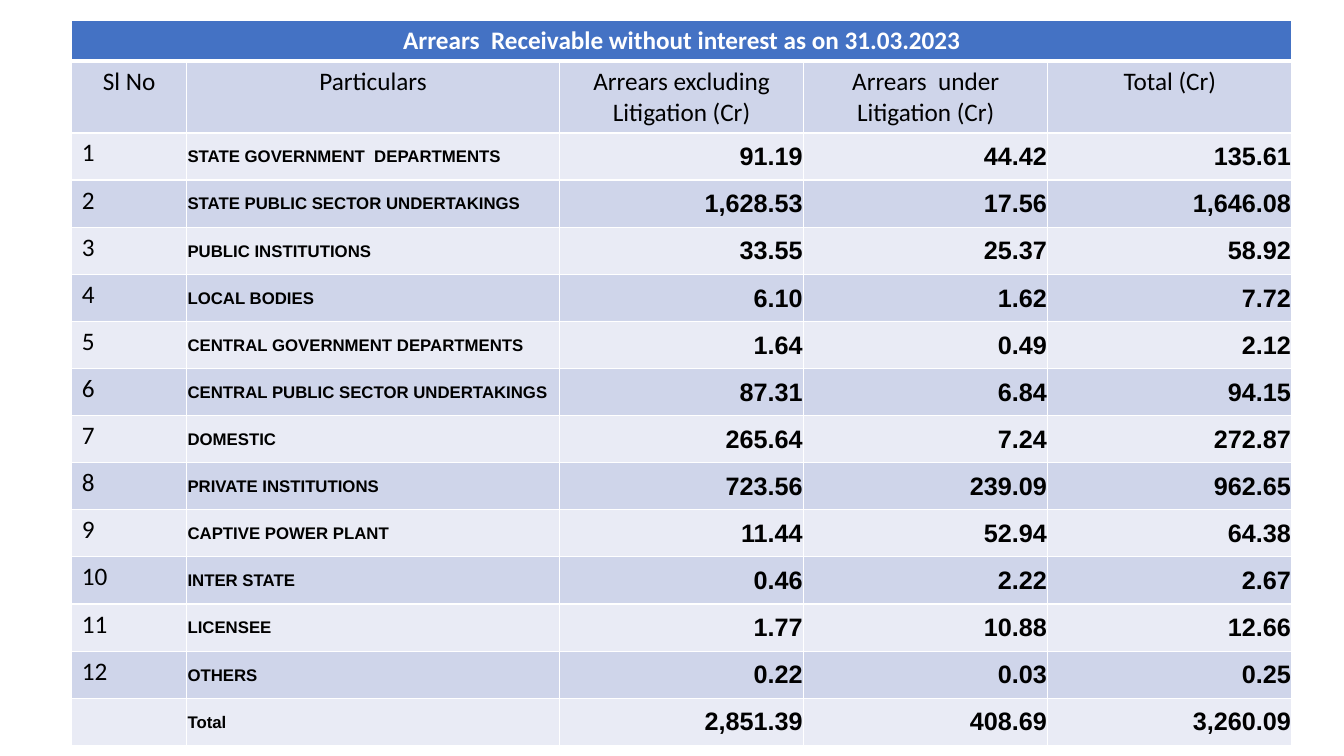
from lxml import etree
from pptx import Presentation
from pptx.dml.color import RGBColor
from pptx.enum import text
from pptx.oxml import ns
from pptx.util import Pt

COLORS = {
    "header": "4472C4",
    "band_dark": "CFD5EA",
    "band_light": "E9EBF5",
    "white": "FFFFFF",
    "black": "000000",
}
LEFT, CENTER, RIGHT = text.PP_ALIGN.LEFT, text.PP_ALIGN.CENTER, text.PP_ALIGN.RIGHT

TITLE = "Arrears  Receivable without interest as on 31.03.2023"
HEADINGS = ["Sl No", "Particulars", "Arrears excluding Litigation (Cr)",
            "Arrears  under Litigation (Cr)", "Total (Cr)"]
ARREARS = [
    ("STATE GOVERNMENT  DEPARTMENTS", "91.19", "44.42", "135.61"),
    ("STATE PUBLIC SECTOR UNDERTAKINGS", "1,628.53", "17.56", "1,646.08"),
    ("PUBLIC INSTITUTIONS", "33.55", "25.37", "58.92"),
    ("LOCAL BODIES", "6.10", "1.62", "7.72"),
    ("CENTRAL GOVERNMENT DEPARTMENTS", "1.64", "0.49", "2.12"),
    ("CENTRAL PUBLIC SECTOR UNDERTAKINGS", "87.31", "6.84", "94.15"),
    ("DOMESTIC", "265.64", "7.24", "272.87"),
    ("PRIVATE INSTITUTIONS", "723.56", "239.09", "962.65"),
    ("CAPTIVE POWER PLANT", "11.44", "52.94", "64.38"),
    ("INTER STATE", "0.46", "2.22", "2.67"),
    ("LICENSEE", "1.77", "10.88", "12.66"),
    ("OTHERS", "0.22", "0.03", "0.25"),
]
TOTALS = ("Total", "2,851.39", "408.69", "3,260.09")

COLUMN_WIDTHS = [82, 266.4, 174.4, 174.4, 174.4]
ROW_HEIGHTS = [29.2, 50.4] + [33.66] * (len(ARREARS) + 1)


class SlideBuilder:
    """Holds the style and the current slide."""

    def __init__(self, slide):
        self.slide = slide
        self.body_font = "Calibri"
        self.data_font = "Arial"

    def table(self, left, top, widths, heights):
        table = self.slide.shapes.add_table(
            len(heights), len(widths), Pt(left), Pt(top),
            Pt(sum(widths)), Pt(sum(heights))).table
        table.first_row = table.horz_banding = False
        for column, width in zip(table.columns, widths):
            column.width = Pt(width)
        for row, height in zip(table.rows, heights):
            row.height = Pt(height)
        return table

    def cell(self, cell, content, fill, color="black", align=LEFT, bold=False,
             bottom=1, top=1):
        cell.fill.solid()
        cell.fill.fore_color.rgb = RGBColor.from_string(COLORS[fill])
        self.borders(cell, {"L": 1, "R": 1, "T": top, "B": bottom})
        cell.text = content
        paragraph = cell.text_frame.paragraphs[0]
        paragraph.alignment = align
        font = paragraph.font
        font.name, font.size, font.bold = self.body_font, Pt(18), bold
        font.color.rgb = RGBColor.from_string(COLORS[color])

    def data_cell(self, cell, content, fill, align, size):
        self.cell(cell, content, fill, align=align, bold=True)
        cell.vertical_anchor = text.MSO_ANCHOR.MIDDLE
        cell.margin_left = cell.margin_right = cell.margin_top = Pt(0.7)
        cell.margin_bottom = Pt(0)
        font = cell.text_frame.paragraphs[0].font
        font.name, font.size = self.data_font, Pt(size)

    def borders(self, cell, widths):
        properties = cell._tc.get_or_add_tcPr()
        for index, (side, width) in enumerate(widths.items()):
            line = etree.Element(ns.qn(f"a:ln{side}"), w=str(Pt(width)))
            fill = etree.SubElement(line, ns.qn("a:solidFill"))
            etree.SubElement(fill, ns.qn("a:srgbClr"), val=COLORS["white"])
            properties.insert(index, line)


def main():
    presentation = Presentation()
    presentation.slide_width, presentation.slide_height = Pt(960), Pt(540)
    builder = SlideBuilder(presentation.slides.add_slide(presentation.slide_layouts[6]))
    table = builder.table(51.3, 14.6, COLUMN_WIDTHS, ROW_HEIGHTS)

    # Title row across all columns
    for column in range(len(HEADINGS)):
        builder.cell(table.cell(0, column), "" if column else TITLE, "header",
                     "white", CENTER, bold=True, bottom=3)
    table.cell(0, 0).merge(table.cell(0, len(HEADINGS) - 1))

    # Column headings
    for column, heading in enumerate(HEADINGS):
        builder.cell(table.cell(1, column), heading, "band_dark", align=CENTER, top=3)

    # Numbered arrears and the total, in alternating bands
    for number, (particulars, *amounts) in enumerate(ARREARS + [TOTALS], start=1):
        row = number + 1
        band = "band_light" if number % 2 else "band_dark"
        serial = str(number) if number <= len(ARREARS) else ""
        builder.cell(table.cell(row, 0), serial, band)
        builder.data_cell(table.cell(row, 1), particulars, band, LEFT, 12)
        for column, amount in enumerate(amounts, start=2):
            builder.data_cell(table.cell(row, column), amount, band, RIGHT, 18)

    presentation.save("out.pptx")


if __name__ == "__main__":
    main()
